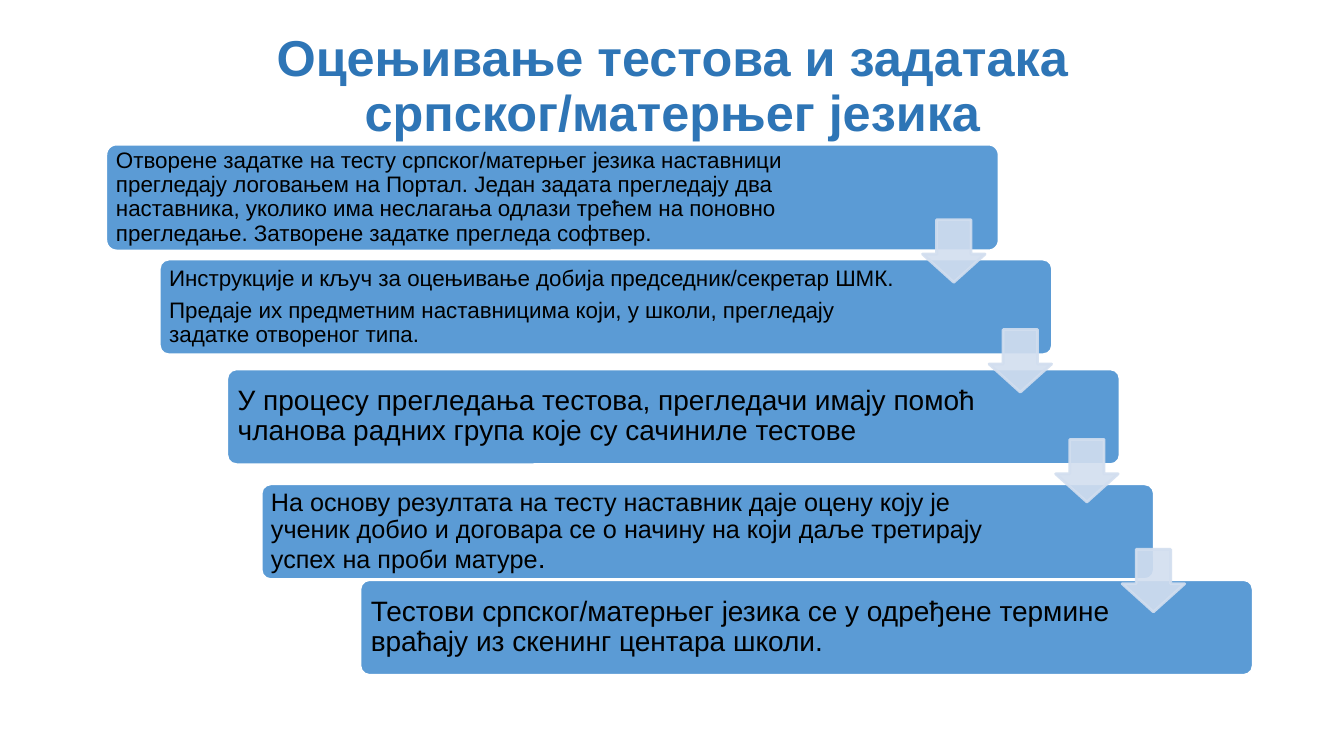
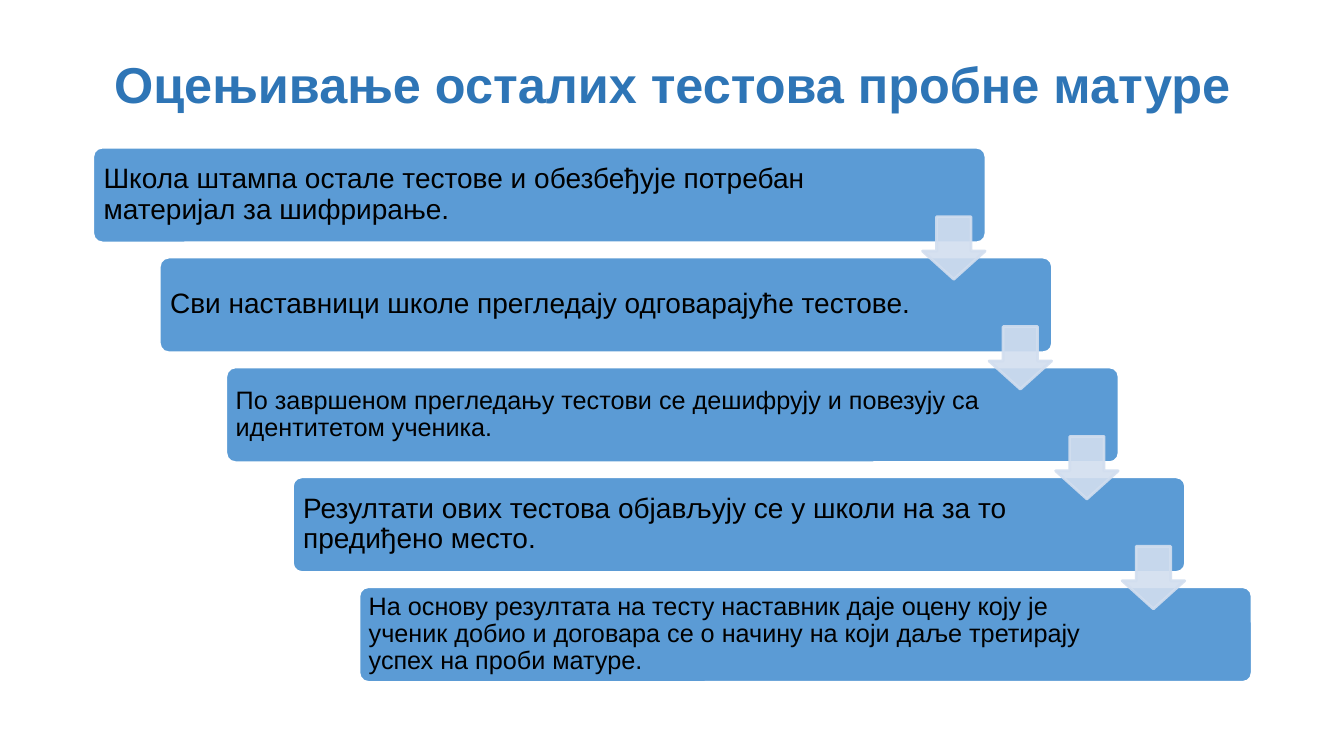
from dataclasses import dataclass

from lxml import etree
from pptx import Presentation
from pptx.dml.color import RGBColor
from pptx.enum import shapes, text
from pptx.oxml import ns
from pptx.util import Inches, Pt

FONT = "Arial"
TITLE = RGBColor(0x2E, 0x75, 0xB6)
BLUE = RGBColor(0x5B, 0x9B, 0xD5)
PALE = RGBColor(0xD2, 0xDE, 0xEF)
WHITE = RGBColor(0xFF, 0xFF, 0xFF)
BLACK = RGBColor(0, 0, 0)
STEP_X, STEP_Y = 0.66, 1.09
BAR_W, BAR_H = 8.86, 0.95
ARROW = 0.62


@dataclass
class Bar:
    x: float
    y: float
    words: str
    size: int = 20
    tail: str = ""
    high: float = BAR_H
    room: float = 1.28


@dataclass
class Page:
    title: str
    bars: list[Bar]
    arrow_y: float


GRADE = (
    "На основу резултата на тесту наставник даје оцену коју је ученик добио "
    "и договара се о начину на који даље третирају успех на проби матуре"
)


def stair(step: int, words: str, size: int = 20, room: float = 1.28) -> Bar:
    return Bar(0.92 + STEP_X * step, 1.46 + STEP_Y * step, words, size, room=room)


PAGES = [
    Page(
        "Оцењивање тестова и задатака српског/матерњег језика",
        [
            Bar(1.05, 1.43,
                "Отворене задатке на тесту српског/матерњег језика наставници "
                "прегледају логовањем на Портал. Један задата прегледају два "
                "наставника, уколико има неслагања одлази трећем на поновно "
                "прегледање. Затворене задатке прегледа софтвер.",
                16, high=1.06, room=1.09),
            Bar(1.58, 2.57,
                "Инструкције и кључ за оцењивање добија председник/секретар ШМК.\n"
                "Предаје их предметним наставницима који, у школи, прегледају "
                "задатке отвореног типа.", 16),
            Bar(2.25, 3.66,
                "У процесу прегледања тестова, прегледачи имају помоћ чланова "
                "радних група које су сачиниле тестове"),
            Bar(2.59, 4.8, GRADE, 18, tail="."),
            Bar(3.57, 5.75,
                "Тестови српског/матерњег језика се у одређене термине враћају "
                "из скенинг центара школи."),
        ],
        2.18,
    ),
    Page(
        "Оцењивање осталих тестова пробне матуре",
        [
            stair(0, "Школа штампа остале тестове и обезбеђује потребан "
                     "материјал за шифрирање.", room=1.09),
            stair(1, "Сви наставници школе прегледају одговарајуће тестове."),
            stair(2, "По завршеном прегледању тестови се дешифрују и повезују "
                     "са идентитетом ученика.", 18),
            stair(3, "Резултати ових тестова објављују се у школи на за то "
                     "предиђено место."),
            stair(4, GRADE + ".", 18),
        ],
        2.15,
    ),
]


def add_title(slide, words: str) -> None:
    box = slide.shapes.add_textbox(Inches(0.92), Inches(0.34), Inches(11.5), Inches(1.06))
    frame = box.text_frame
    frame.word_wrap = True
    frame.vertical_anchor = text.MSO_ANCHOR.MIDDLE
    frame.text = words
    para = frame.paragraphs[0]
    para.alignment = text.PP_ALIGN.CENTER
    para.line_spacing = 0.9
    font = para.runs[0].font
    font.name, font.size, font.bold = FONT, Pt(36), True
    font.color.rgb = TITLE


def add_shape(slide, kind, x: float, y: float, wide: float, high: float,
              fill: RGBColor, line: RGBColor):
    shape = slide.shapes.add_shape(kind, Inches(x), Inches(y), Inches(wide), Inches(high))
    shape.shadow.inherit = False
    shape.fill.solid()
    shape.fill.fore_color.rgb = fill
    shape.line.color.rgb = line
    shape.line.width = Pt(2)
    return shape


def add_bar(slide, bar: Bar) -> None:
    shape = add_shape(slide, shapes.MSO_SHAPE.ROUNDED_RECTANGLE,
                      bar.x, bar.y, BAR_W, bar.high, BLUE, WHITE)
    shape.adjustments[0] = 0.1
    frame = shape.text_frame
    frame.word_wrap = True
    frame.vertical_anchor = text.MSO_ANCHOR.MIDDLE
    pad = 0.08 if bar.size == 20 else 0.07
    frame.margin_left = frame.margin_top = frame.margin_bottom = Inches(pad)
    frame.margin_right = Inches(pad + bar.room)
    frame.text = bar.words
    for para in frame.paragraphs:
        para.alignment = text.PP_ALIGN.LEFT
        para.line_spacing = 0.9
        para.space_after = Pt(bar.size * 0.35)
        for run in para.runs:
            set_font(run, bar.size)
    if bar.tail:
        run = frame.paragraphs[-1].add_run()
        run.text = bar.tail
        set_font(run, 20)


def set_font(run, size: int) -> None:
    run.font.name, run.font.size = FONT, Pt(size)
    run.font.color.rgb = BLACK


def add_arrow(slide, x: float, y: float) -> None:
    shape = add_shape(slide, shapes.MSO_SHAPE.DOWN_ARROW, x, y, ARROW, ARROW, PALE, PALE)
    shape.adjustments[0] = 0.55
    shape.adjustments[1] = 0.45
    for color in shape.element.spPr.iter(ns.qn("a:srgbClr")):
        etree.SubElement(color, ns.qn("a:alpha"), val="90000")


def main() -> None:
    deck = Presentation()
    deck.slide_width, deck.slide_height = Inches(13.33), Inches(7.5)
    for page in PAGES:
        slide = deck.slides.add_slide(deck.slide_layouts[6])
        add_title(slide, page.title)
        for bar in page.bars:
            add_bar(slide, bar)
        for step in range(len(page.bars) - 1):
            add_arrow(slide, 9.15 + STEP_X * step, page.arrow_y + STEP_Y * step)
    deck.save("out.pptx")


if __name__ == "__main__":
    main()
